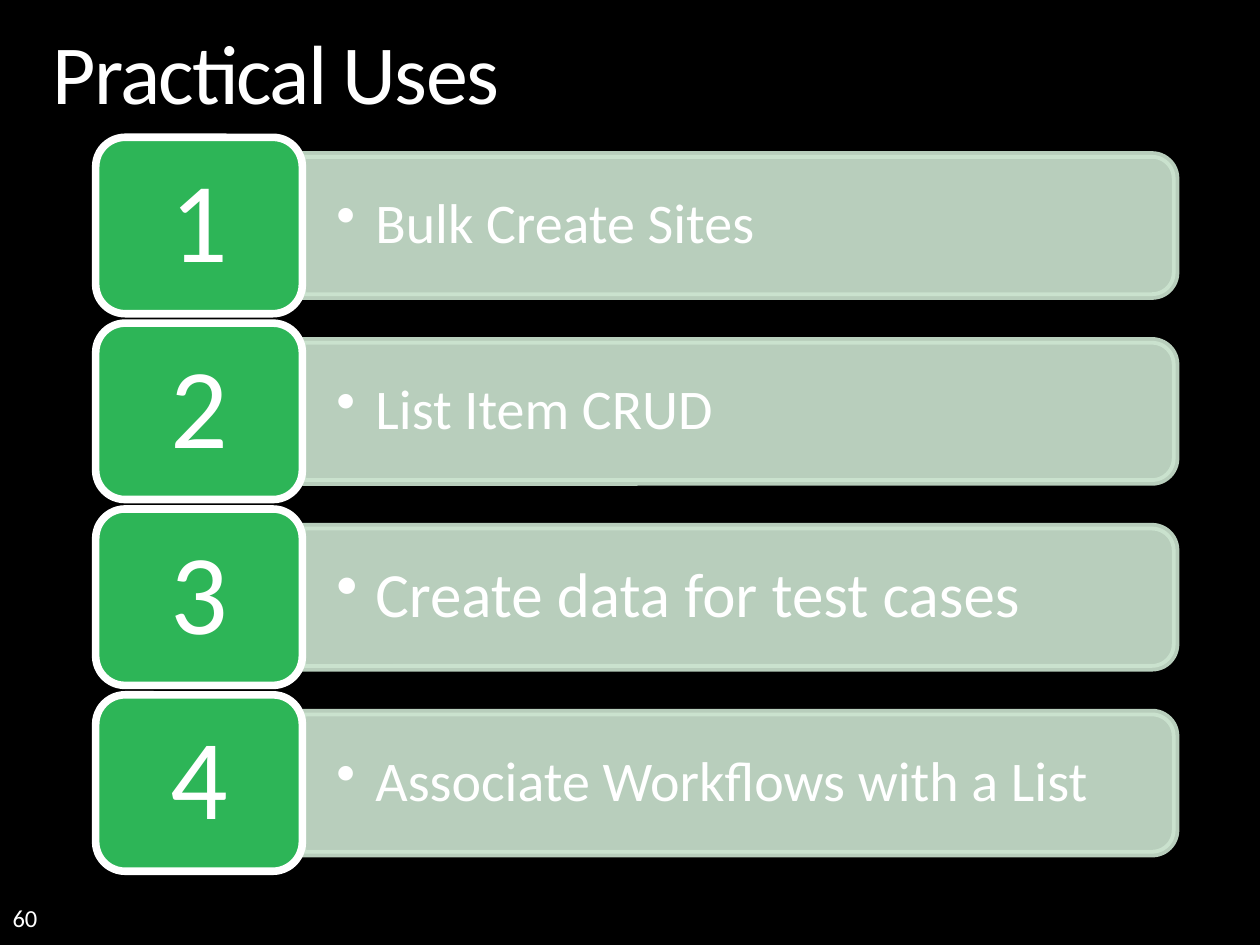
from dataclasses import dataclass
from lxml.etree import SubElement
from pptx import Presentation
from pptx.dml.color import RGBColor
from pptx.enum.shapes import MSO_SHAPE
from pptx.enum.text import MSO_ANCHOR, PP_ALIGN
from pptx.oxml.ns import qn
from pptx.util import Inches, Pt


@dataclass(frozen=True)
class Theme:
    back: RGBColor = RGBColor.from_string("000000")
    text: RGBColor = RGBColor.from_string("FFFFFF")
    bar: RGBColor = RGBColor.from_string("CDE5D1")
    badge: RGBColor = RGBColor.from_string("2DB557")
    face: str = "Calibri"
    title: int = 48
    digit: int = 65
    item: int = 32
    large: int = 36
    page: int = 14
    edge: float = 4.33


theme = Theme()


def write(shape, text, size, pad=(0, 0), anchor=MSO_ANCHOR.TOP,
          align=PP_ALIGN.LEFT, spacing=0.9):
    """Fill a shape with one formatted paragraph and return it."""
    frame = shape.text_frame
    side, top = (Inches(inset) for inset in pad)
    form = {"word_wrap": True, "vertical_anchor": anchor,
            "margin_left": side, "margin_right": side,
            "margin_top": top, "margin_bottom": top}
    for name, value in form.items():
        setattr(frame, name, value)
    para = frame.paragraphs[0]
    para.alignment, para.line_spacing = align, spacing
    run = para.add_run()
    run.text = text
    for name, value in {"name": theme.face, "size": Pt(size)}.items():
        setattr(run.font, name, value)
    run.font.color.rgb = theme.text
    return para


def draw(kind, box, fill, line):
    """Add a filled and outlined shape without a shadow."""
    shape = slide.shapes.add_shape(kind, *map(Inches, box))
    shape.shadow.inherit = False
    shape.fill.solid()
    shape.fill.fore_color.rgb = fill
    shape.line.color.rgb = line
    shape.line.width = Pt(theme.edge)
    return shape


# Slide
deck = Presentation()
deck.slide_width, deck.slide_height = Inches(10), Inches(7.5)
slide = deck.slides.add_slide(deck.slide_layouts[6])
slide.background.fill.solid()
slide.background.fill.fore_color.rgb = theme.back

# Page number and title
page = slide.shapes.add_textbox(*map(Inches, (0.1, 7, 2.33, 0.4)))
write(page, "60", theme.page, anchor=MSO_ANCHOR.BOTTOM, spacing=1)
title = slide.shapes.add_textbox(*map(Inches, (0.42, 0.25, 9.16, 0.73)))
para = write(title, "Practical Uses", theme.title)
para.runs[0].font._element.set("spc", "-100")

# Numbered rows
items = [("Bulk Create Sites", theme.item),
         ("List Item CRUD", theme.item),
         ("Create data for test cases", theme.large),
         ("Associate Workflows with a List", theme.item)]
first, pitch = 1.79, 1.475
left, long, thick = 2.4, 6.93, 1.12
pad = (0.27, 0.14)

for row, (text, size) in enumerate(items):
    mid = first + row * pitch

    # Bar, turned so that its round corners face right
    box = (left + (long - thick) / 2, mid - long / 2, thick, long)
    bar = draw(MSO_SHAPE.ROUND_2_SAME_RECTANGLE, box, theme.bar, theme.bar)
    bar.rotation = 90
    for color in bar._element.spPr.iter(qn("a:srgbClr")):
        SubElement(color, qn("a:alpha"), val="90000")

    # Bullet text
    label = slide.shapes.add_textbox(
        *map(Inches, (left, mid - 0.505, 6.87, 1.01)))
    para = write(label, text, size, pad, MSO_ANCHOR.MIDDLE)
    props = para._p.get_or_add_pPr()
    for name, value in {"lvl": "1", "marL": str(Inches(0.31)),
                        "indent": str(Inches(-0.31))}.items():
        props.set(name, value)
    SubElement(props, qn("a:buChar"), char="•")

    # Number badge
    badge = draw(MSO_SHAPE.ROUNDED_RECTANGLE, (0.76, mid - 0.7, 1.64, 1.4),
                 theme.badge, theme.text)
    write(badge, str(row + 1), theme.digit, pad, MSO_ANCHOR.MIDDLE,
          PP_ALIGN.CENTER)

deck.save("out.pptx")
